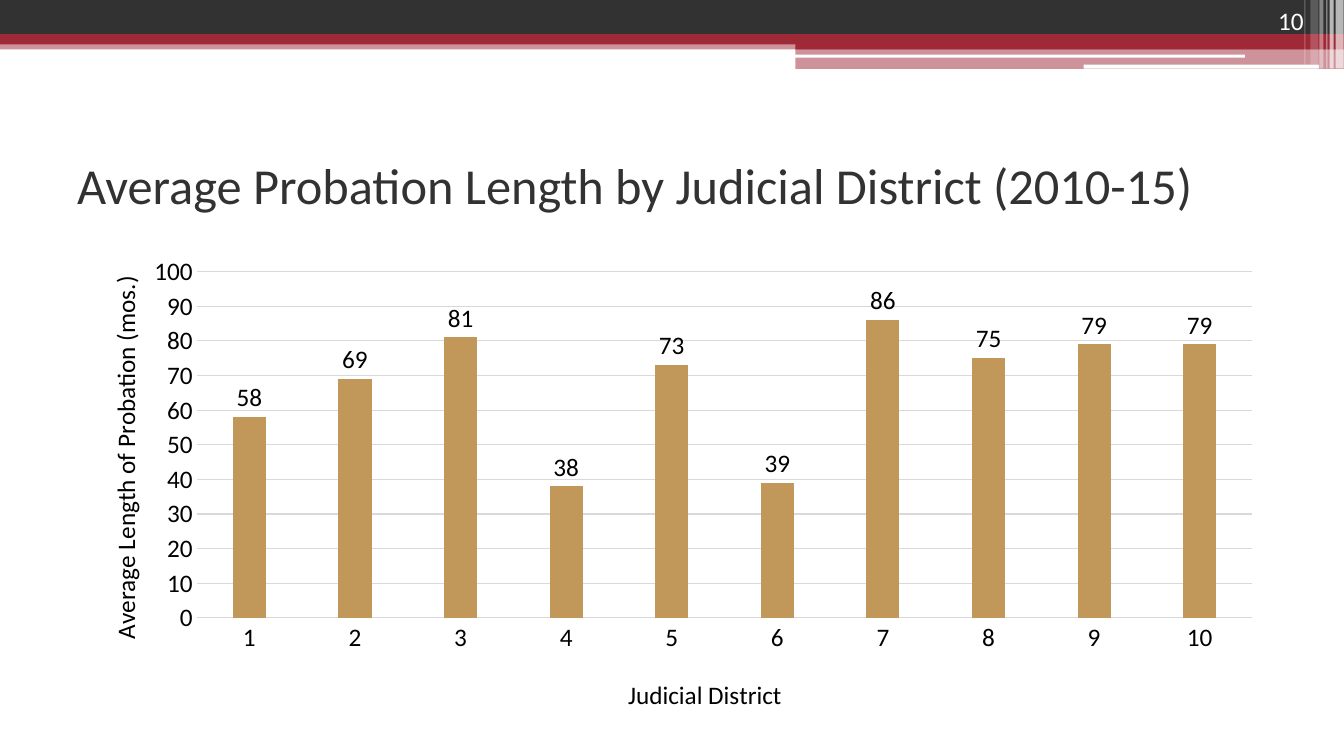
import pptx
import pptx.util
import pptx.dml.color
import pptx.chart.data
import pptx.enum.chart
import pptx.enum.shapes
import pptx.enum.text
import pptx.oxml

SHAPE = pptx.enum.shapes.MSO_SHAPE
ALIGN = pptx.enum.text.PP_ALIGN
ANCHOR = pptx.enum.text.MSO_ANCHOR
CHART = pptx.enum.chart
CELL = pptx.util.Inches(1 / 12)


def tint(code):
    return pptx.dml.color.RGBColor.from_string(code)


def assign(item, values):
    for name, value in values.items():
        setattr(item, name, value)


class Deck:
    """Draw styled elements on a grid of 160 columns by 90 rows."""

    face = "Calibri"
    dark, red, white = "323232", "9F2936", "FFFFFF"
    gold, rule, black = "C19859", "D9D9D9", "000000"

    def __init__(self):
        self.show = pptx.Presentation()
        assign(self.show, {"slide_width": 160 * CELL, "slide_height": 90 * CELL})
        self.slide = self.show.slides.add_slide(self.show.slide_layouts[6])

    def grid(self, *cells):
        return [round(cell * CELL) for cell in cells]

    def style(self, font, size, color):
        assign(font, {"name": self.face, "size": pptx.util.Pt(size), "bold": False})
        font.color.rgb = tint(color)

    def bar(self, box, color, alpha=100, kind=SHAPE.RECTANGLE):
        shape = self.slide.shapes.add_shape(kind, *self.grid(*box))
        shape.shadow.inherit = False
        shape.fill.solid()
        shape.fill.fore_color.rgb = tint(color)
        shape.line.fill.background()
        if alpha < 100:
            shade = shape._element.spPr.xpath("./a:solidFill/a:srgbClr")[0]
            node = pptx.oxml.parse_xml(
                '<a:alpha xmlns:a="http://schemas.openxmlformats.org/drawingml/2006/main"'
                f' val="{alpha * 1000}"/>')
            shade.append(node)

    def text(self, box, words, size, color, anchor, align):
        frame = self.slide.shapes.add_textbox(*self.grid(*box)).text_frame
        assign(frame, {"word_wrap": True, "vertical_anchor": anchor})
        line = frame.paragraphs[0]
        line.alignment = align
        run = line.add_run()
        run.text = words
        self.style(run.font, size, color)

    def place(self, node, index, **shares):
        for old in node.xpath("./c:layout"):
            node.remove(old)
        parts = "".join(f'<c:{key} val="{value}"/>' for key, value in shares.items())
        node.insert(index, pptx.oxml.parse_xml(
            '<c:layout xmlns:c="http://schemas.openxmlformats.org/drawingml/2006/chart">'
            f"<c:manualLayout>{parts}</c:manualLayout></c:layout>"))

    def axis(self, axis, words, turn, left, top):
        title = axis.axis_title
        run = title.text_frame.paragraphs[0].add_run()
        run.text = words
        self.style(run.font, 18, self.black)
        title._element.xpath(".//a:bodyPr")[0].set("rot", str(turn * 60000))
        self.place(title._element, 1, xMode="edge", yMode="edge", x=left, y=top)
        self.style(axis.tick_labels.font, 18, self.black)
        assign(axis, {"major_tick_mark": CHART.XL_TICK_MARK.NONE,
                      "minor_tick_mark": CHART.XL_TICK_MARK.NONE})

    def hair(self, line):
        line.color.rgb = tint(self.rule)
        line.width = pptx.util.Pt(0.75)

    def chart(self, box, values):
        data = pptx.chart.data.CategoryChartData(number_format="0")
        data.categories = [str(n) for n in range(1, len(values) + 1)]
        data.add_series("Series 1", values)
        chart = self.slide.shapes.add_chart(
            CHART.XL_CHART_TYPE.COLUMN_CLUSTERED, *self.grid(*box), data).chart
        assign(chart, {"has_legend": False, "has_title": False})
        self.style(chart.font, 10, self.black)
        plot = chart.plots[0]
        assign(plot, {"gap_width": 219, "overlap": -27, "vary_by_categories": False})
        series = plot.series[0]
        series.format.fill.solid()
        series.format.fill.fore_color.rgb = tint(self.gold)
        labels = series.data_labels
        assign(labels, {"show_value": True, "number_format": "0",
                        "number_format_is_linked": False,
                        "position": CHART.XL_LABEL_POSITION.OUTSIDE_END})
        self.style(labels.font, 18, self.black)
        self.axis(chart.category_axis, "Judicial District", 0, 0.46, 0.89)
        self.hair(chart.category_axis.format.line)
        scale = chart.value_axis
        self.axis(scale, "Average Length of Probation (mos.)", -90, 0.03, 0.05)
        assign(scale, {"minimum_scale": 0, "maximum_scale": 100, "major_unit": 10})
        assign(scale.tick_labels, {"number_format": "0", "number_format_is_linked": False})
        scale.format.line.fill.background()
        self.hair(scale.major_gridlines.format.line)
        area = chart._chartSpace.xpath("./c:chart/c:plotArea")[0]
        self.place(area, 0, layoutTarget="inner", xMode="edge", yMode="edge",
                   x=0.107, y=0.05, w=0.873, h=0.726)


def main():
    deck = Deck()
    for top, tall, color, alpha in [(4.8, 1.08, deck.red, 50), (0, 4.08, deck.dark, 100),
                                    (4.08, 1.2, deck.red, 100)]:
        deck.bar((0, top, 160, tall), color, alpha)
    for top, tall, alpha in [(4.68, 1.2, 100), (5.8, 2.4, 50)]:
        deck.bar((94.68, top, 65.32, tall), deck.red, alpha)
    for box in [(94.6, 6.5, 53.6, 0.36), (129, 7.7, 28, 0.48)]:
        deck.bar(box, deck.white, kind=SHAPE.ROUNDED_RECTANGLE)
    for left, wide, tall, alpha in [
            (159, 0.96, 8.16, 65), (158.28, 0.48, 8.16, 65), (157.92, 0.12, 8.16, 60),
            (157.08, 0.48, 8.16, 40), (156, 0.96, 7.7, 20), (155.28, 0.12, 7.7, 30)]:
        deck.bar((left, 0, wide, tall), deck.white, alpha)
    deck.text((8, 15, 144, 14), "Average Probation Length by Judicial District (2010-15)",
              36, deck.dark, ANCHOR.MIDDLE, ALIGN.LEFT)
    deck.text((143, 0, 13.4, 4.8), "10", 18, deck.white, ANCHOR.BOTTOM, ALIGN.RIGHT)
    deck.chart((8, 29.5, 144, 56.8), [58, 69, 81, 38, 73, 39, 86, 75, 79, 79])
    deck.show.save("out.pptx")


if __name__ == "__main__":
    main()
